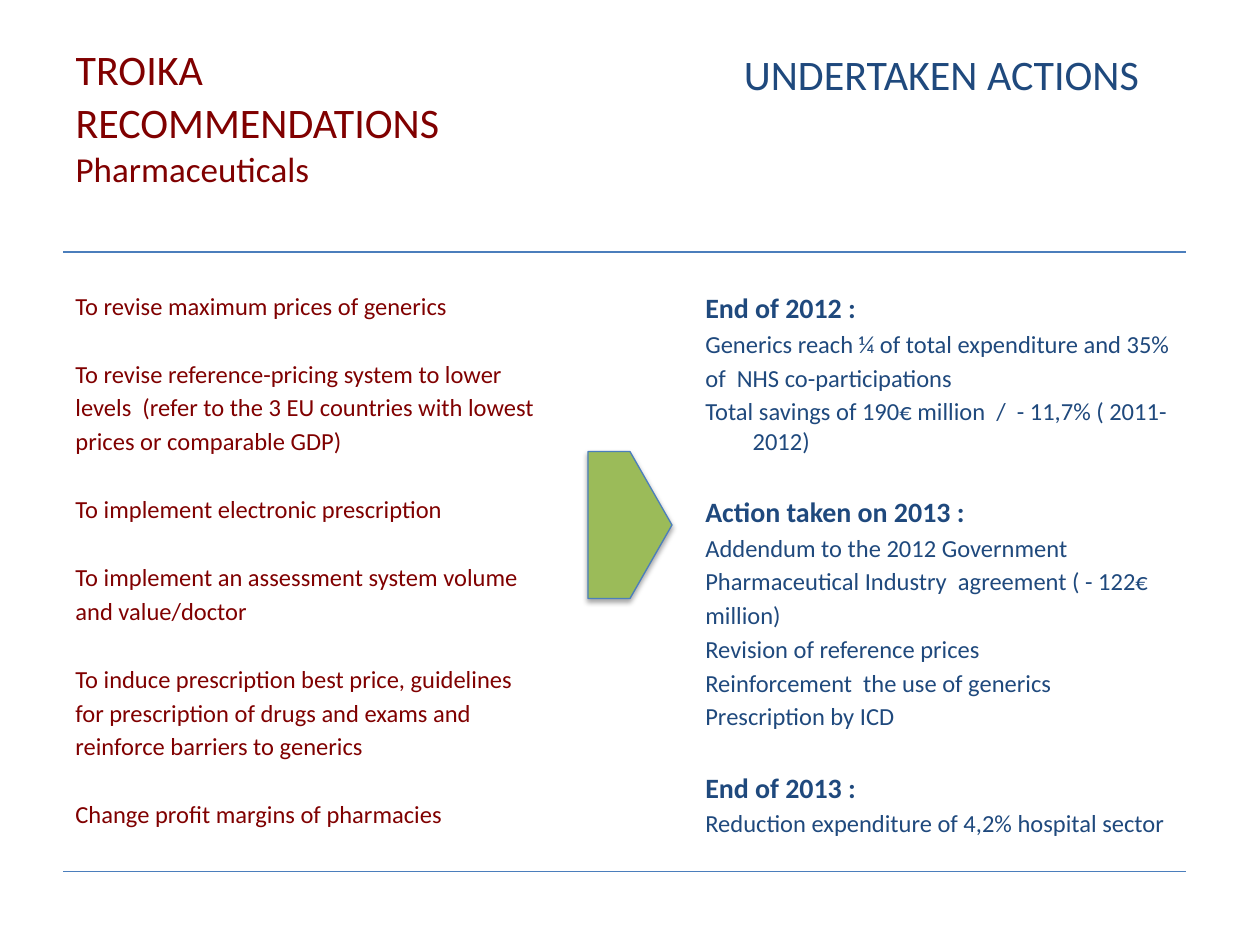
import pptx
import pptx.dml.color
import pptx.enum.shapes
import pptx.enum.text
import pptx.oxml
import pptx.util

Pt = pptx.util.Pt
ANCHOR = pptx.enum.text.MSO_ANCHOR
COLORS = {
    "recommendation": "800000",
    "action": "1F497D",
    "rule": "4B7EBC",
    "arrow": "9BBB59",
}
DRAWING_NS = 'xmlns:a="http://schemas.openxmlformats.org/drawingml/2006/main"'
LEFT, RIGHT = 36, 396
HANGING = 27
LINE_GAP = 2.5

# Each inner list is a group of lines; groups stand apart.
RECOMMENDATIONS = [
    ["To revise maximum prices of generics"],
    ["To revise reference-pricing system to lower",
     "levels  (refer to the 3 EU countries with lowest",
     "prices or comparable GDP)"],
    ["To implement electronic prescription"],
    ["To implement an assessment system volume",
     "and value/doctor"],
    ["To induce prescription best price, guidelines",
     "for prescription of drugs and exams and",
     "reinforce barriers to generics"],
    ["Change profit margins of pharmacies"],
]
ACTIONS = [
    ["End of 2012 :",
     "Generics reach ¼ of total expenditure and 35%",
     "of  NHS co-participations",
     "Total savings of 190€ million  /  - 11,7% ( 2011-2012)"],
    ["Action taken on 2013 :",
     "Addendum to the 2012 Government",
     "Pharmaceutical Industry  agreement ( - 122€",
     "million)",
     "Revision of reference prices",
     "Reinforcement  the use of generics",
     "Prescription by ICD"],
    ["End of 2013 :",
     "Reduction expenditure of 4,2% hospital sector"],
]


def rgb(name):
    return pptx.dml.color.RGBColor.from_string(COLORS[name])


def add_run(paragraph, text, *, size, color, bold=False):
    run = paragraph.add_run()
    run.text = text
    run.font.name = "Calibri"
    run.font.size = Pt(size)
    run.font.bold = bold
    run.font.color.rgb = rgb(color)


def add_box(slide, left, top, width, height):
    box = slide.shapes.add_textbox(Pt(left), Pt(top), Pt(width), Pt(height))
    box.text_frame.word_wrap = True
    return box.text_frame


def add_title(slide):
    title = slide.shapes.title
    title.left, title.top = Pt(LEFT), Pt(21.6)
    title.width, title.height = Pt(306.7), Pt(90)
    frame = title.text_frame
    frame.auto_size = pptx.enum.text.MSO_AUTO_SIZE.NONE
    frame.vertical_anchor = ANCHOR.MIDDLE
    heading = frame.paragraphs[0]
    heading.alignment = pptx.enum.text.PP_ALIGN.LEFT
    add_run(heading, "TROIKA", size=24, color="recommendation")
    heading.add_line_break()
    for text, size in (("RECOMMENDATIONS", 24), (" ", 25.2), ("Pharmaceuticals", 20)):
        add_run(heading, text, size=size, color="recommendation")


def add_column(slide, groups, *, left, width, height, color, group_gap, headed=False):
    """Add a text column; with headed, each group opens with a bold line."""
    frame = add_box(slide, left, 138.2, width, height)
    frame.margin_top = Pt(28)
    for group_index, group in enumerate(groups):
        for line_index, text in enumerate(group):
            first = group_index == line_index == 0
            paragraph = frame.paragraphs[0] if first else frame.add_paragraph()
            if not first:
                paragraph.space_before = Pt(LINE_GAP if line_index else group_gap)
            properties = paragraph._p.get_or_add_pPr()
            properties.set("marL", str(Pt(HANGING)))
            properties.set("indent", str(-Pt(HANGING)))
            heading = headed and line_index == 0
            add_run(paragraph, text, size=16 if heading else 14, color=color, bold=heading)


def add_actions_heading(slide):
    heading = add_box(slide, RIGHT, 24, 289.4, 103).paragraphs[0]
    heading.alignment = pptx.enum.text.PP_ALIGN.CENTER
    add_run(heading, "UNDERTAKEN ACTIONS ", size=24, color="action")


def add_rule(slide, y):
    rule = slide.shapes.add_connector(
        pptx.enum.shapes.MSO_CONNECTOR.STRAIGHT, Pt(LEFT), Pt(y), Pt(678), Pt(y))
    rule.line.color.rgb = rgb("rule")
    rule.line.width = Pt(0.75)
    rule._element.spPr.append(pptx.oxml.parse_xml(f"<a:effectLst {DRAWING_NS}/>"))


def add_arrow(slide):
    arrow = slide.shapes.add_shape(
        pptx.enum.shapes.MSO_SHAPE.PENTAGON, Pt(336), Pt(258), Pt(48), Pt(84))
    arrow.adjustments[0] = 0.5
    arrow.fill.solid()
    arrow.fill.fore_color.rgb = rgb("arrow")
    arrow.line.color.rgb = rgb("rule")
    arrow.line.width = Pt(0.75)
    arrow._element.spPr.append(pptx.oxml.parse_xml(
        f'<a:effectLst {DRAWING_NS}>'
        f'<a:outerShdw blurRad="{Pt(3.1)}" dist="{Pt(1.8)}" dir="5400000" rotWithShape="0">'
        '<a:srgbClr val="000000"><a:alpha val="35000"/></a:srgbClr>'
        '</a:outerShdw></a:effectLst>'))


def main():
    presentation = pptx.Presentation()
    presentation.slide_width, presentation.slide_height = Pt(720), Pt(540)
    slide = presentation.slides.add_slide(presentation.slide_layouts[5])
    add_title(slide)
    add_column(slide, RECOMMENDATIONS, left=LEFT, width=318.2, height=331.2,
               color="recommendation", group_gap=22)
    add_column(slide, ACTIONS, left=RIGHT, width=306.7, height=365.8,
               color="action", group_gap=22.5, headed=True)
    add_actions_heading(slide)
    for y in (144, 498):
        add_rule(slide, y)
    add_arrow(slide)
    presentation.save("out.pptx")


if __name__ == "__main__":
    main()
